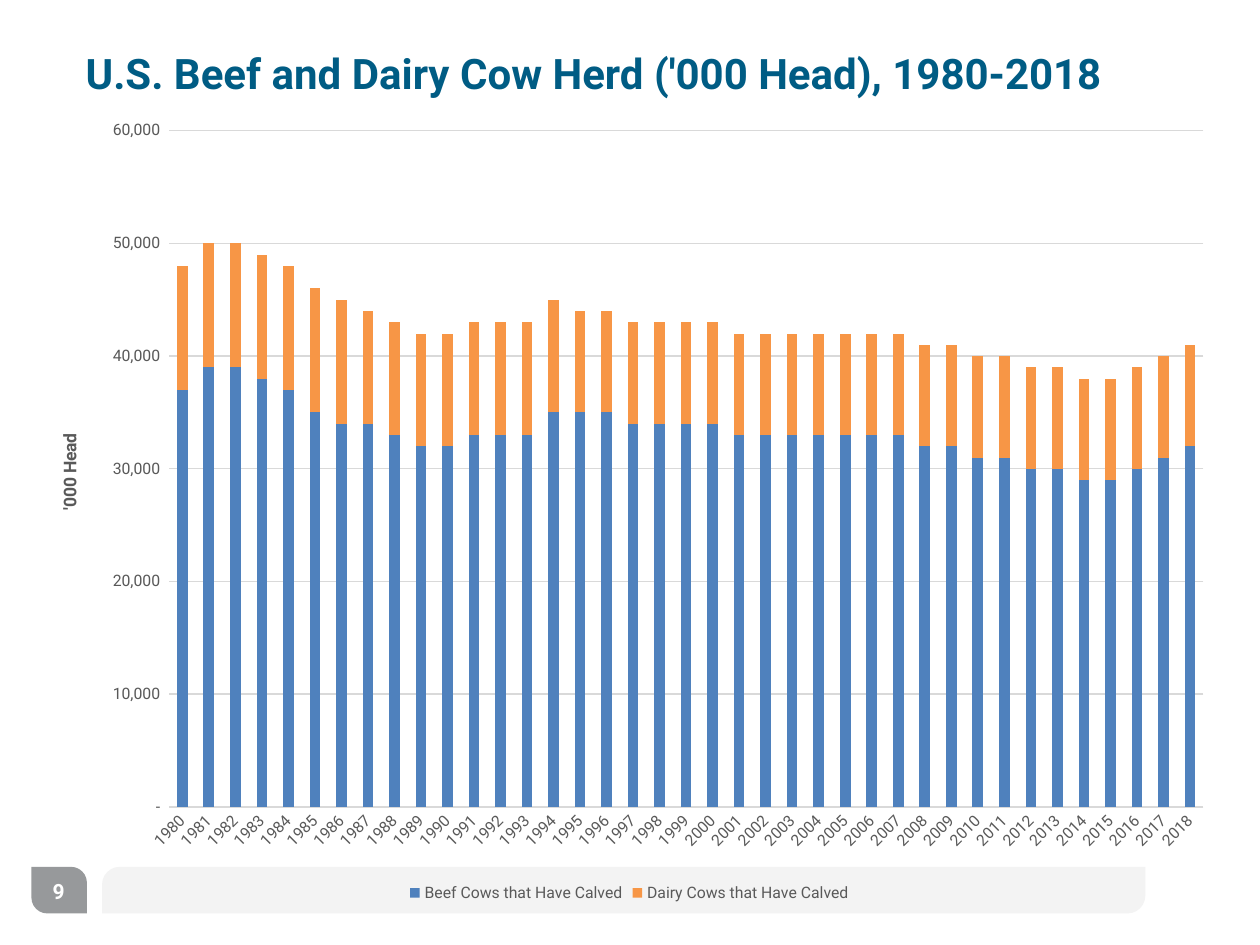
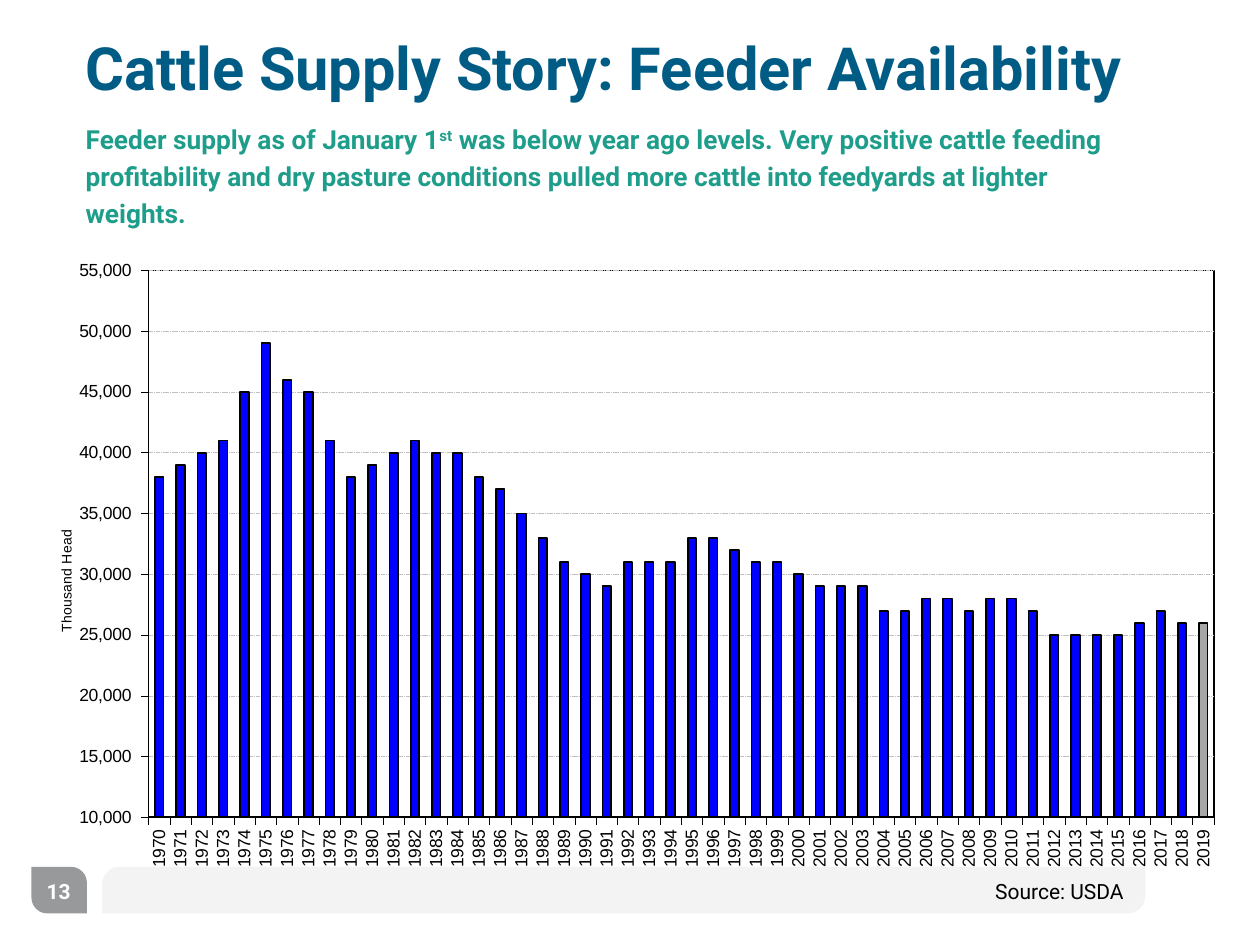
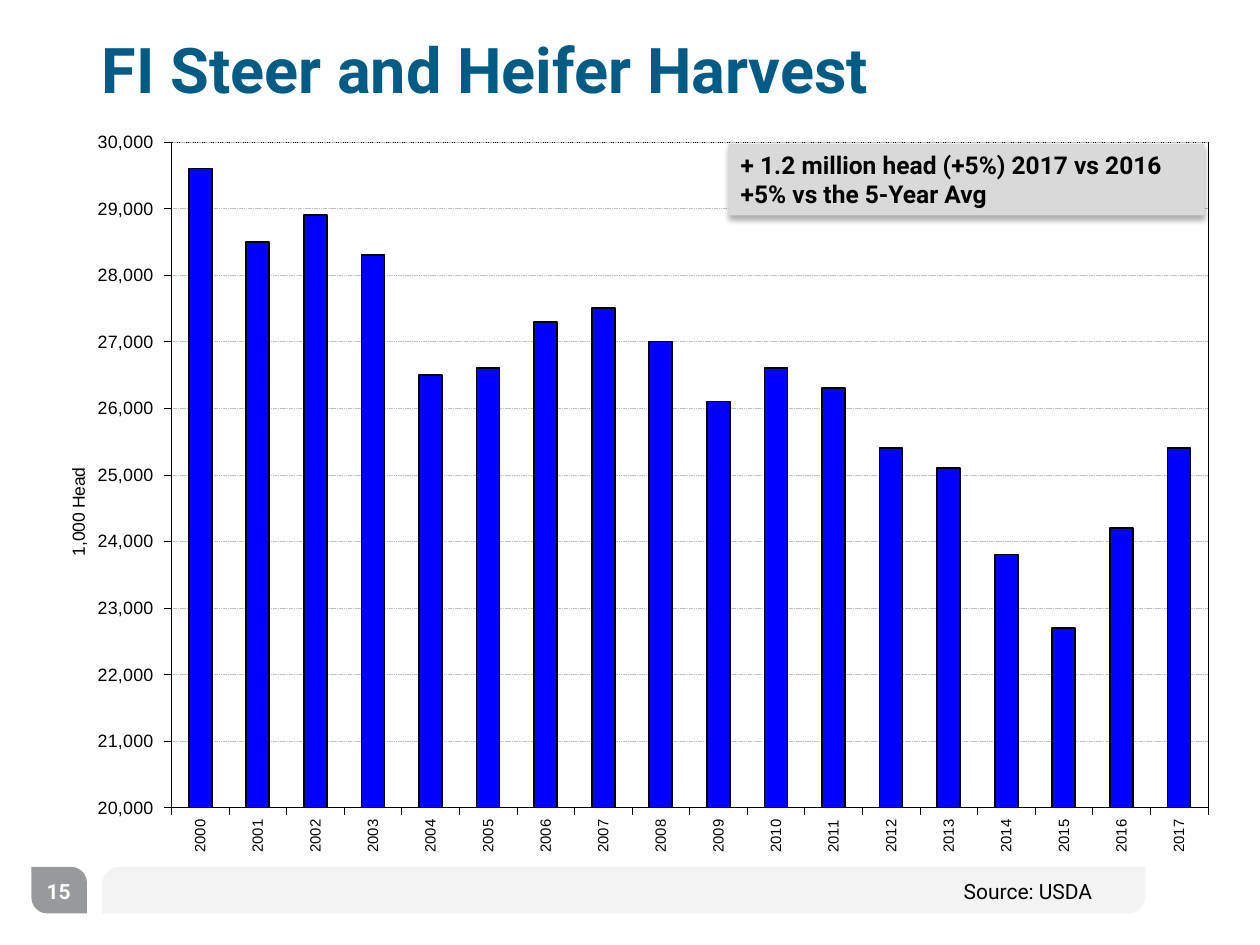
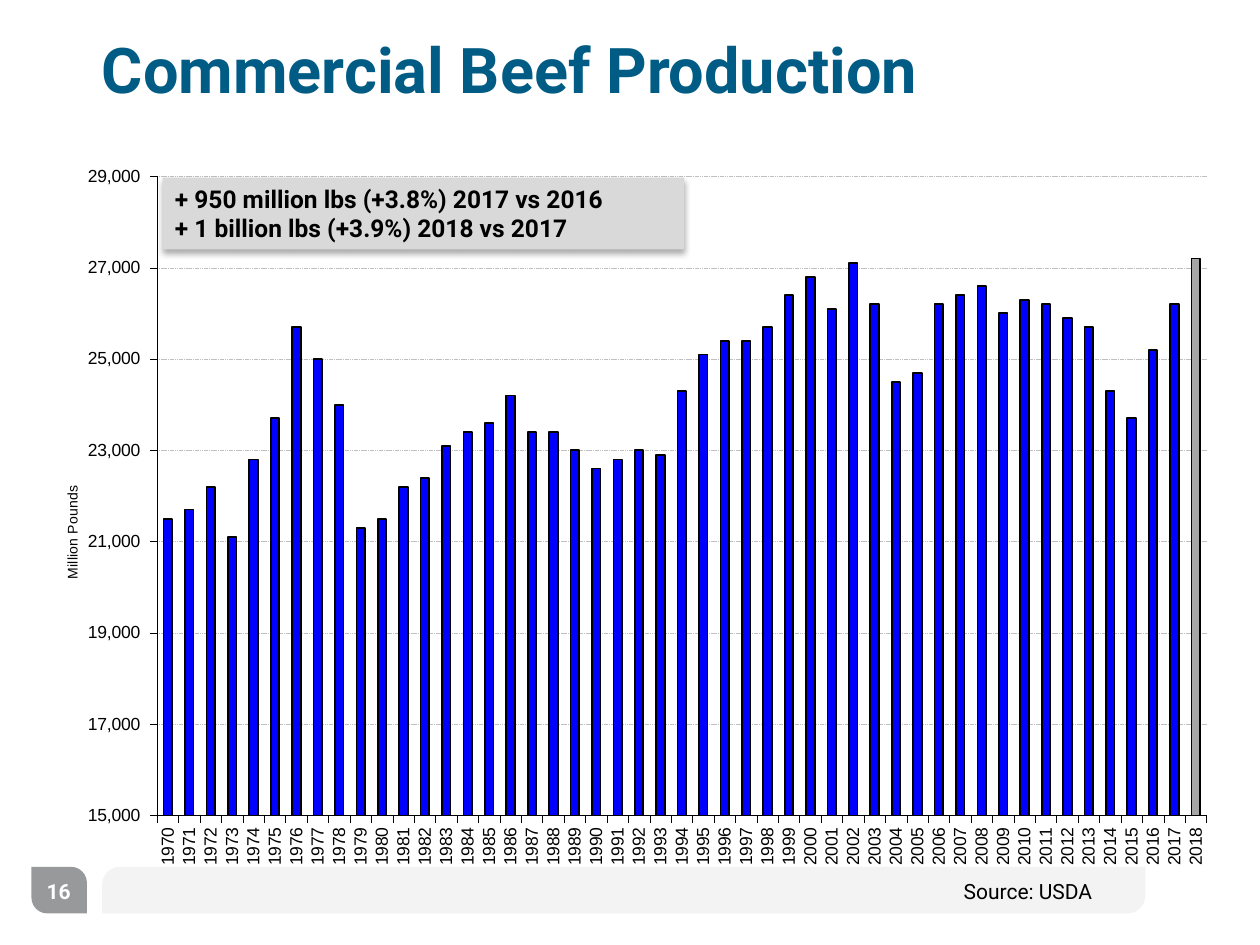
from lxml import etree
from pptx import Presentation
from pptx import util as u
from pptx.chart.data import CategoryChartData
from pptx.dml.color import RGBColor
from pptx.enum import chart as ch, dml, shapes, text
from pptx.oxml import parse_xml
from pptx.oxml.ns import nsdecls, qn

COLORS = {
    "title": "005C84", "body": "1E9D8B", "band": "D0D0D0", "badge": "97999B",
    "white": "FFFFFF", "black": "000000", "label": "595959", "rule": "D9D9D9",
    "grid": "C0C0C0", "bar": "0000FF", "latest": "A6A6A6",
    "beef": "4F81BD", "dairy": "F79646", "callout": "D9D9D9",
}
FONT = "Roboto"
CHART_FONT = "Arial"
FOOTER = (0.25, 6.88, 8.84, 0.37)
ACCOUNTING = '_(* #,##0_);_(* \\(#,##0\\);_(* "-"_);_(@_)'
PLAIN = "#,##0_);[Red]\\(#,##0\\)"

BEEF = [37, 39, 39, 38, 37, 35, 34, 34, 33, 32, 32, 33, 33, 33, 35, 35, 35, 34, 34, 34,
        34, 33, 33, 33, 33, 33, 33, 33, 32, 32, 31, 31, 30, 30, 29, 29, 30, 31, 32]
DAIRY = [11] * 7 + [10] * 8 + [9] * 24
FEEDERS = [38, 39, 40, 41, 45, 49, 46, 45, 41, 38, 39, 40, 41, 40, 40, 38, 37, 35, 33, 31,
           30, 29, 31, 31, 31, 33, 33, 32, 31, 31, 30, 29, 29, 29, 27, 27, 28, 28, 27, 28,
           28, 27, 25, 25, 25, 25, 26, 27, 26, 26]
HARVEST = [29.6, 28.5, 28.9, 28.3, 26.5, 26.6, 27.3, 27.5, 27, 26.1, 26.6, 26.3, 25.4,
           25.1, 23.8, 22.7, 24.2, 25.4]
PRODUCTION = [21.5, 21.7, 22.2, 21.1, 22.8, 23.7, 25.7, 25, 24, 21.3, 21.5, 22.2, 22.4,
              23.1, 23.4, 23.6, 24.2, 23.4, 23.4, 23, 22.6, 22.8, 23, 22.9, 24.3, 25.1,
              25.4, 25.4, 25.7, 26.4, 26.8, 26.1, 27.1, 26.2, 24.5, 24.7, 26.2, 26.4,
              26.6, 26, 26.3, 26.2, 25.9, 25.7, 24.3, 23.7, 25.2, 26.2, 27.2]


def rgb(name):
    return RGBColor.from_string(COLORS[name])


def inches(box):
    return [u.Inches(v) for v in box]


def set_font(font, size, color="black", bold=False, name=FONT):
    font.name, font.size, font.bold = name, u.Pt(size), bold
    font.color.rgb = rgb(color)


def set_line(line, color, width):
    line.color.rgb = rgb(color)
    line.width = u.Pt(width)


def add_text(s, box, words, size, color="black", bold=False, inset=None, spacing=None):
    tf = s.shapes.add_textbox(*inches(box)).text_frame
    tf.word_wrap = True
    if inset:
        tf.margin_left, tf.margin_top, tf.margin_right, tf.margin_bottom = inches(inset)
    p = tf.paragraphs[0]
    for words_run in words:
        r = p.add_run()
        r.text = words_run
        set_font(r.font, size, color, bold)
    if spacing:
        p.line_spacing = u.Pt(spacing)
    return tf


def add_band(s, box, color, adjustments):
    sp = s.shapes.add_shape(shapes.MSO_SHAPE.ROUND_2_DIAG_RECTANGLE, *inches(box))
    sp.shadow.inherit = False
    sp.fill.solid()
    sp.fill.fore_color.rgb = rgb(color)
    sp.line.fill.background()
    for i, value in enumerate(adjustments):
        sp.adjustments[i] = value
    return sp


def add_footer(s, box, number):
    x, y, w, h = box
    band = add_band(s, (x + 0.56, y, w - 0.56, h), "band", (0.38, 0))
    fill = band.fill._xPr.find(".//" + qn("a:srgbClr"))
    etree.SubElement(fill, qn("a:alpha")).set("val", "25000")
    add_band(s, (x, y, 0.44, h), "badge", (0, 0.34))
    tf = add_text(s, (x + 0.01, y - 0.01, 0.41, 0.4), [str(number)], 12, "white", True)
    tf.word_wrap = False
    tf.vertical_anchor = text.MSO_ANCHOR.MIDDLE
    tf.paragraphs[0].alignment = text.PP_ALIGN.CENTER


def add_source(s, box):
    tf = add_text(s, box, ["Source: USDA"], 12)
    tf.auto_size = text.MSO_AUTO_SIZE.SHAPE_TO_FIT_TEXT


def add_callout(s, box, lines):
    sp = s.shapes.add_shape(shapes.MSO_SHAPE.RECTANGLE, *inches(box))
    sp.fill.solid()
    sp.fill.fore_color.rgb = rgb("callout")
    sp.line.fill.background()
    sp._element.spPr.append(parse_xml(
        f'<a:effectLst {nsdecls("a")}><a:outerShdw blurRad="44450" dist="27940" dir="5400000">'
        f'<a:srgbClr val="{COLORS["black"]}"><a:alpha val="32000"/></a:srgbClr>'
        '</a:outerShdw></a:effectLst>'))
    tf = sp.text_frame
    tf.text = "\n".join(lines)
    tf.word_wrap = True
    tf.auto_size = text.MSO_AUTO_SIZE.SHAPE_TO_FIT_TEXT
    tf.vertical_anchor = text.MSO_ANCHOR.TOP
    for p in tf.paragraphs:
        p.alignment = text.PP_ALIGN.LEFT
        set_font(p.runs[0].font, 14, bold=True)


def set_layout(parent, index, **places):
    for old in parent.findall(qn("c:layout")):
        parent.remove(old)
    modes = {"xMode": "edge", "yMode": "edge"}
    if "w" in places:
        modes = {"layoutTarget": "inner", **modes}
    layout = etree.Element(qn("c:layout"))
    manual = etree.SubElement(layout, qn("c:manualLayout"))
    for tag, value in {**modes, **places}.items():
        etree.SubElement(manual, qn("c:" + tag)).set("val", str(value))
    parent.insert(index, layout)


def rotate(parent, degrees):
    body = parent.find(".//" + qn("a:bodyPr"))
    body.set("rot", str(degrees * 60000))
    body.set("vert", "horz")


def add_columns(s, box, kind, first_year, series, plot_at, font):
    data = CategoryChartData()
    count = len(next(iter(series.values())))
    data.categories = [str(first_year + i) for i in range(count)]
    for name, thousands in series.items():
        data.add_series(name, [round(v * 1000) for v in thousands])
    chart = s.shapes.add_chart(kind, *inches(box), data).chart
    chart.has_title = chart.has_legend = False
    set_font(chart.font, 10, name=font)
    plot = chart.plots[0]
    plot.gap_width = 150
    plot.vary_by_categories = False
    area = chart._chartSpace.find(".//" + qn("c:plotArea"))
    set_layout(area, 0, **dict(zip("xywh", plot_at)))
    return chart


def color_series(ser, color):
    ser.invert_if_negative = False
    ser.format.fill.solid()
    ser.format.fill.fore_color.rgb = rgb(color)


def style_axes(chart, scale, number_format, sizes, angle, tick, color, font):
    cat, val = chart.category_axis, chart.value_axis
    for axis, size in zip((cat, val), sizes):
        axis.major_tick_mark = tick
        axis.minor_tick_mark = ch.XL_TICK_MARK.NONE
        set_font(axis.tick_labels.font, size, color, name=font)
    rotate(cat._element.find(qn("c:txPr")), angle)
    val.minimum_scale, val.maximum_scale, val.major_unit = scale
    val.tick_labels.number_format = number_format
    val.tick_labels.number_format_is_linked = False
    val.has_major_gridlines = True


def title_value_axis(chart, words, at, size, color="black", bold=False, font=CHART_FONT):
    title = chart.value_axis.axis_title
    title.text_frame.text = words
    set_font(title.text_frame.paragraphs[0].runs[0].font, size, color, bold, font)
    rotate(title._element, -90)
    set_layout(title._element, 1, x=at[0], y=at[1])


def add_herd_chart(s, box):
    series = {"Beef Cows that Have Calved": BEEF, "Dairy Cows that Have Calved": DAIRY}
    chart = add_columns(s, box, ch.XL_CHART_TYPE.COLUMN_STACKED, 1980, series,
                        (0.115, 0.031, 0.865, 0.844), FONT)
    chart.plots[0].overlap = 100
    for ser, color in zip(chart.plots[0].series, ("beef", "dairy")):
        color_series(ser, color)
    style_axes(chart, (0, 60000, 10000), ACCOUNTING, (9, 9), -45,
               ch.XL_TICK_MARK.NONE, "label", FONT)
    set_line(chart.category_axis.format.line, "rule", 0.75)
    chart.value_axis.format.line.fill.background()
    set_line(chart.value_axis.major_gridlines.format.line, "rule", 0.75)
    title_value_axis(chart, "'000 Head", (0.02, 0.405), 10, "label", True, FONT)
    chart.has_legend = True
    chart.legend.position = ch.XL_LEGEND_POSITION.BOTTOM
    chart.legend.include_in_layout = False
    set_font(chart.legend.font, 9, "label")


def add_blue_chart(s, box, first_year, thousands, scale, number_format, plot_at,
                   axis_title, title_at, title_size, sizes=(10, 10), latest=False, border=0):
    chart = add_columns(s, box, ch.XL_CHART_TYPE.COLUMN_CLUSTERED, first_year,
                        {"Series 1": thousands}, plot_at, CHART_FONT)
    ser = chart.plots[0].series[0]
    color_series(ser, "bar")
    set_line(ser.format.line, "black", 1)
    if latest:
        point = ser.points[len(thousands) - 1].format
        point.fill.solid()
        point.fill.fore_color.rgb = rgb("latest")
        set_line(point.line, "black", 1)
    style_axes(chart, scale, number_format, sizes, -90,
               ch.XL_TICK_MARK.OUTSIDE, "black", CHART_FONT)
    chart.category_axis.tick_label_position = ch.XL_TICK_LABEL_POSITION.LOW
    for axis in (chart.category_axis, chart.value_axis):
        set_line(axis.format.line, "black", 0.25)
    grid = chart.value_axis.major_gridlines.format.line
    set_line(grid, "grid", 0.25)
    grid.dash_style = dml.MSO_LINE.SQUARE_DOT
    title_value_axis(chart, axis_title, title_at, title_size)
    if border:
        area = chart._chartSpace.find(".//" + qn("c:plotArea"))
        area.append(parse_xml(
            f'<c:spPr {nsdecls("c", "a")}><a:noFill/><a:ln w="{u.Pt(border)}"><a:solidFill>'
            f'<a:srgbClr val="{COLORS["black"]}"/></a:solidFill></a:ln></c:spPr>'))


def start_slide(prs, number, title, box, size):
    s = prs.slides.add_slide(prs.slide_layouts[6])
    add_footer(s, FOOTER, number)
    add_text(s, box, [title], size, "title", True, (0, 0, 0, 0), 40)
    return s


def herd_slide(prs):
    s = start_slide(prs, 9, "U.S. Beef and Dairy Cow Herd ('000 Head), 1980-2018",
                    (0.68, 0.22, 8.97, 0.62), 24)
    add_herd_chart(s, (0.25, 0.84, 9.49, 6.36))


def feeder_slide(prs):
    s = start_slide(prs, 13, "Cattle Supply Story: Feeder Availability",
                    (0.68, 0.26, 9.11, 0.62), 34)
    tf = add_text(s, (0.68, 0.89, 8.42, 1.01), [
        "Feeder supply as of January 1", "st",
        " was below year ago levels. Very positive cattle feeding profitability and dry "
        "pasture conditions pulled more cattle into feedyards at lighter weights."],
        15, "body", True, (0, 0.05, 0, 0.05), 21)
    tf.paragraphs[0].runs[1].font._element.set("baseline", "30000")
    add_source(s, (7.8, 6.92, 1.29, 0.3))
    add_blue_chart(s, (0.26, 1.9, 9.48, 5.03), 1970, FEEDERS, (10000, 55000, 5000), PLAIN,
                   (0.097, 0.049, 0.892, 0.863), "Thousand Head", (0.018, 0.454), 8,
                   latest=True, border=1)


def harvest_slide(prs):
    s = start_slide(prs, 15, "FI Steer and Heifer Harvest", (0.81, 0.29, 8.97, 0.62), 36)
    add_source(s, (7.55, 6.92, 1.35, 0.3))
    add_blue_chart(s, (0.31, 0.9, 9.38, 5.97), 2000, HARVEST, (20000, 30000, 1000), ACCOUNTING,
                   (0.112, 0.038, 0.877, 0.885), "1,000 Head", (0.021, 0.467), 10,
                   sizes=(8.5, 10.2), border=0.25)
    add_callout(s, (5.78, 1.14, 3.78, 0.57),
                ["+ 1.2 million head (+5%) 2017 vs 2016", "+5% vs the 5-Year Avg"])


def production_slide(prs):
    s = start_slide(prs, 16, "Commercial Beef Production", (0.81, 0.29, 8.97, 0.62), 36)
    add_source(s, (7.55, 6.92, 1.35, 0.3))
    add_blue_chart(s, (0.31, 1.14, 9.38, 5.79), 1970, PRODUCTION, (15000, 29000, 2000),
                   ACCOUNTING, (0.1, 0.045, 0.888, 0.876), "Million Pounds",
                   (0.018, 0.465), 8, latest=True)
    add_callout(s, (1.29, 1.41, 4.14, 0.57),
                ["+ 950 million lbs (+3.8%) 2017 vs 2016",
                 "+ 1 billion lbs (+3.9%) 2018 vs 2017"])


def main():
    prs = Presentation()
    prs.slide_width, prs.slide_height = u.Inches(10), u.Inches(7.5)
    for build in (herd_slide, feeder_slide, harvest_slide, production_slide):
        build(prs)
    prs.save("out.pptx")


if __name__ == "__main__":
    main()
